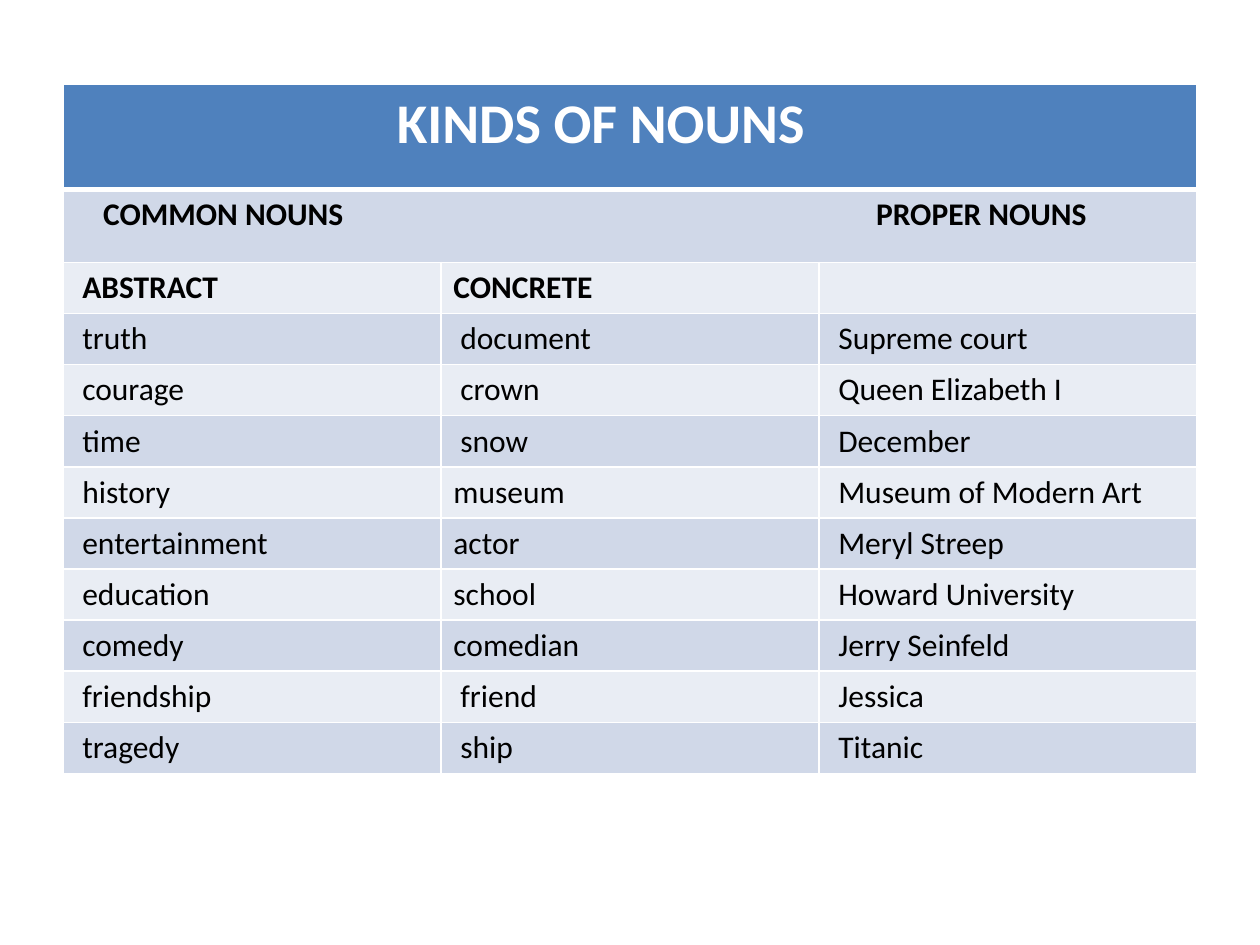
import pptx
import pptx.dml.color
import pptx.oxml.ns
import pptx.util
from lxml import etree

Cm = pptx.util.Cm
Pt = pptx.util.Pt

COLORS = {
    "white": "FFFFFF",
    "black": "000000",
    "title": "4F81BD",
    "dark_band": "D0D8E8",
    "light_band": "E9EDF4",
}
FONT = "Calibri"
CELL_MARGIN = 0.25
WORD_INDENT = 0.14
COLUMN_WIDTH = 7.62
TITLE_HEIGHT, GROUP_HEIGHT, WORD_HEIGHT = 2.12, 1.47, 1.03

SUBHEADS = ("ABSTRACT", "CONCRETE", "")
NOUNS = [
    ("truth", "document", "Supreme court"),
    ("courage", "crown", "Queen Elizabeth I"),
    ("time", "snow", "December"),
    ("history", "museum", "Museum of Modern Art"),
    ("entertainment", "actor", "Meryl Streep"),
    ("education", "school", "Howard University"),
    ("comedy", "comedian", "Jerry Seinfeld"),
    ("friendship", "friend", "Jessica"),
    ("tragedy", "ship", "Titanic"),
]
FLUSH_WORDS = {"CONCRETE", "museum", "actor", "school", "comedian"}


def rgb(name):
    return pptx.dml.color.RGBColor.from_string(COLORS[name])


def add_element(parent, tag, **attributes):
    return etree.SubElement(parent, pptx.oxml.ns.qn(tag), **attributes)


def style_cell(cell, fill, top=1, bottom=1):
    """Give a cell white borders, in points, and a solid fill."""
    properties = cell._tc.get_or_add_tcPr()
    for side, width in (("L", 1), ("R", 1), ("T", top), ("B", bottom)):
        border = add_element(properties, f"a:ln{side}", w=str(Pt(width)))
        solid = add_element(border, "a:solidFill")
        add_element(solid, "a:srgbClr", val=COLORS["white"])
    cell.fill.solid()
    cell.fill.fore_color.rgb = rgb(fill)


def write(cell, text, size=18, bold=False, color="black", indent=0, tab=None):
    """Write one line, indented in cm, with an optional tab stop in cm."""
    cell.margin_left = Cm(CELL_MARGIN + indent)
    paragraph = cell.text_frame.paragraphs[0]
    if tab is not None:
        stops = add_element(paragraph._p.get_or_add_pPr(), "a:tabLst")
        add_element(stops, "a:tab", pos=str(Cm(tab)), algn="l")
    paragraph.font.size = Pt(size)
    if text:
        run = paragraph.add_run()
        run.text = text
        run.font.name = FONT
        run.font.size = Pt(size)
        run.font.bold = bold
        run.font.color.rgb = rgb(color)


def add_heading_row(table, row, text, fill, borders, **text_format):
    """Fill a row merged across the whole table."""
    last = len(table.columns) - 1
    table.cell(row, 0).merge(table.cell(row, last))
    for column in range(last + 1):
        style_cell(table.cell(row, column), fill, **borders)
    write(table.cell(row, 0), text, bold=True, **text_format)


def add_word_row(table, row, words, bold=False):
    fill = "dark_band" if row % 2 else "light_band"
    for column, word in enumerate(words):
        cell = table.cell(row, column)
        style_cell(cell, fill)
        indent = 0 if word in FLUSH_WORDS else WORD_INDENT
        write(cell, word, bold=bold, indent=indent)


def add_noun_table(slide):
    heights = [TITLE_HEIGHT, GROUP_HEIGHT] + [WORD_HEIGHT] * (len(NOUNS) + 1)
    columns = len(SUBHEADS)
    table = slide.shapes.add_table(
        len(heights), columns, Cm(1.27), Cm(1.7),
        Cm(COLUMN_WIDTH * columns), Cm(sum(heights)),
    ).table
    for column in table.columns:
        column.width = Cm(COLUMN_WIDTH)
    for row, height in zip(table.rows, heights):
        row.height = Cm(height)

    add_heading_row(table, 0, "KINDS OF NOUNS", "title", {"bottom": 3},
                    size=32, color="white", indent=6.48)
    add_heading_row(table, 1, "COMMON NOUNS\tPROPER NOUNS", "dark_band",
                    {"top": 3}, indent=0.56, tab=15.58)
    add_word_row(table, 2, SUBHEADS, bold=True)
    for row, words in enumerate(NOUNS, start=3):
        add_word_row(table, row, words)


def main():
    presentation = pptx.Presentation()
    presentation.slide_width = Cm(25.4)
    presentation.slide_height = Cm(19.05)
    slide = presentation.slides.add_slide(presentation.slide_layouts[6])
    add_noun_table(slide)
    presentation.save("out.pptx")


if __name__ == "__main__":
    main()
